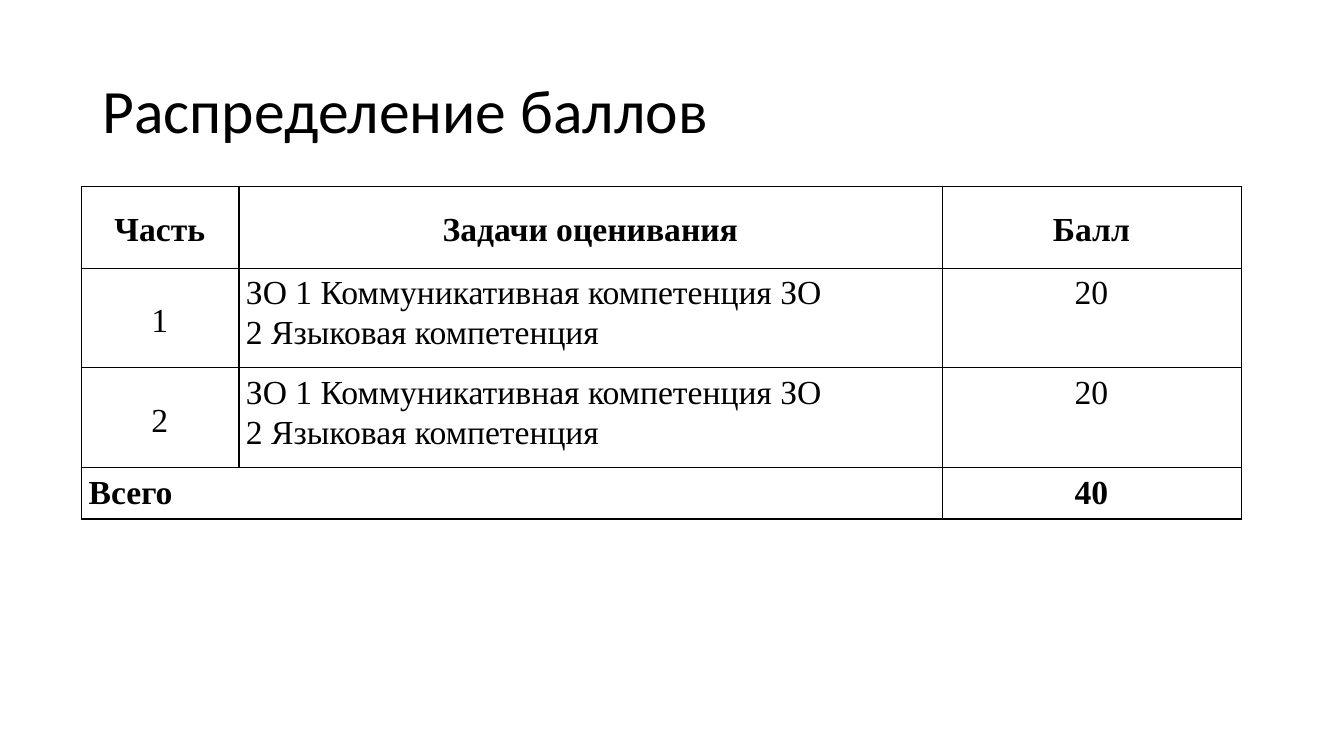
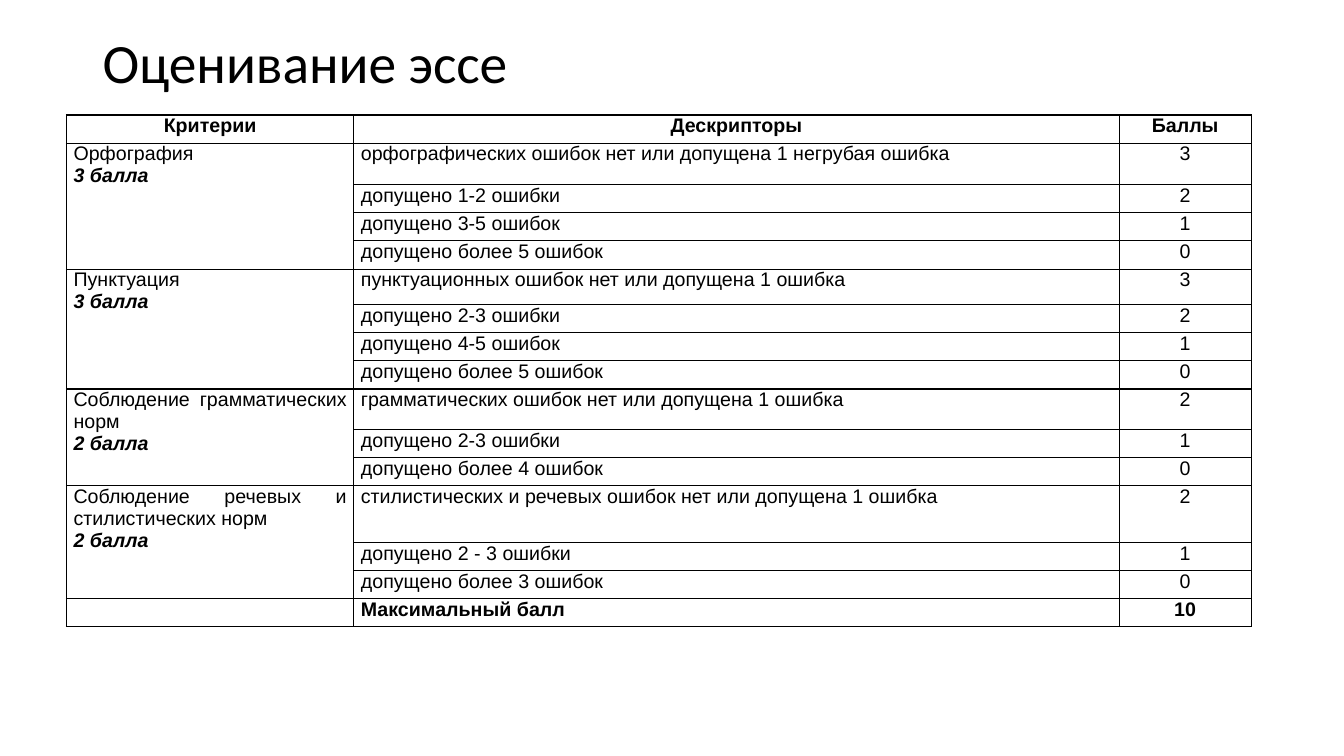
from lxml import etree
from pptx import Presentation
from pptx import util as u
from pptx.dml.color import RGBColor
from pptx.enum import text
from pptx.oxml import ns

COLORS = {"ink": "000000", "paper": "FFFFFF"}
TITLE_FONT = "Calibri"
CENTER = text.PP_ALIGN.CENTER
LEFT = text.PP_ALIGN.LEFT
JUSTIFY = text.PP_ALIGN.JUSTIFY
TOP = text.MSO_ANCHOR.TOP
MIDDLE = text.MSO_ANCHOR.MIDDLE

SCORE_STYLE = {
    "font": "Times New Roman", "size": 24, "line_spacing": 1.07,
    "space_after": 0.7, "margins": (0.07, 0.04, 0.08, 0),
}
ESSAY_STYLE = {
    "font": "Arial", "size": 14, "line_spacing": 1,
    "space_after": 0, "margins": (0.07, 0, 0.07, 0),
}

SCORE_TASKS = "ЗO 1 Коммуникативная компетенция ЗO\v2 Языковая компетенция"
SCORE_PARTS = [("1", SCORE_TASKS, "20"), ("2", SCORE_TASKS, "20")]

ROW_HEIGHT = 0.28
CRITERIA = [
    ("Орфография", "3 балла", 0.41, [
        ("орфографических ошибок нет или допущена 1 негрубая ошибка", "3"),
        ("допущено 1-2 ошибки", "2"),
        ("допущено 3-5 ошибок", "1"),
        ("допущено более 5 ошибок", "0"),
    ]),
    ("Пунктуация", "3 балла", 0.35, [
        ("пунктуационных ошибок нет или допущена 1 ошибка", "3"),
        ("допущено 2-3 ошибки", "2"),
        ("допущено 4-5 ошибок", "1"),
        ("допущено более 5 ошибок", "0"),
    ]),
    ("Соблюдение грамматических норм", "2 балла", 0.4, [
        ("грамматических ошибок нет или допущена 1 ошибка", "2"),
        ("допущено 2-3 ошибки", "1"),
        ("допущено более 4 ошибок", "0"),
    ]),
    ("Соблюдение речевых и стилистических норм", "2 балла", 0.56, [
        ("стилистических и речевых ошибок нет или допущена 1 ошибка", "2"),
        ("допущено 2 - 3 ошибки", "1"),
        ("допущено более 3 ошибок", "0"),
    ]),
]


def style_font(font, name, size, bold=False, italic=False):
    font.name = name
    font.size = u.Pt(size)
    font.bold = bold
    font.italic = italic
    font.color.rgb = RGBColor.from_string(COLORS["ink"])


def add_slide(presentation, title, title_height, title_size):
    slide = presentation.slides.add_slide(presentation.slide_layouts[6])
    slide.background.fill.solid()
    slide.background.fill.fore_color.rgb = RGBColor.from_string(COLORS["paper"])
    shape = slide.shapes.add_textbox(
        u.Inches(0.92), u.Inches(0.4), u.Inches(11.5), u.Inches(title_height))
    frame = shape.text_frame
    frame.word_wrap = True
    frame.vertical_anchor = MIDDLE
    paragraph = frame.paragraphs[0]
    paragraph.text = title
    paragraph.line_spacing = 0.9
    style_font(paragraph.font, TITLE_FONT, title_size)
    return slide


def add_borders(cell):
    properties = cell._tc.get_or_add_tcPr()
    for side in ("lnL", "lnR", "lnT", "lnB"):
        line = etree.SubElement(properties, ns.qn(f"a:{side}"), w=str(u.Pt(1)))
        fill = etree.SubElement(line, ns.qn("a:solidFill"))
        etree.SubElement(fill, ns.qn("a:srgbClr"), val=COLORS["ink"])


def add_grid(slide, left, top, widths, heights, style):
    table = slide.shapes.add_table(
        len(heights), len(widths), u.Inches(left), u.Inches(top),
        u.Inches(sum(widths)), u.Inches(sum(heights))).table
    table.first_row = False
    table.horz_banding = False
    for column, width in zip(table.columns, widths):
        column.width = u.Inches(width)
    for row, height in zip(table.rows, heights):
        row.height = u.Inches(height)
    for cell in table.iter_cells():
        add_borders(cell)
        cell.fill.background()
        (cell.margin_left, cell.margin_top,
         cell.margin_right, cell.margin_bottom) = map(u.Inches, style["margins"])
        style_font(cell.text_frame.paragraphs[0].font, style["font"], style["size"])
    return table


def write_cell(cell, style, content, align, bold=False, anchor=TOP, note=None):
    cell.vertical_anchor = anchor
    frame = cell.text_frame
    lines = [(frame.paragraphs[0], content, bold, False)]
    if note:
        lines.append((frame.add_paragraph(), note, True, True))
    for paragraph, line, is_bold, is_italic in lines:
        paragraph.text = line
        paragraph.alignment = align
        paragraph.line_spacing = style["line_spacing"]
        paragraph.space_after = u.Pt(style["space_after"])
        style_font(paragraph.font, style["font"], style["size"], is_bold, is_italic)


def write_header(table, style, labels, anchor=TOP):
    for column, label in enumerate(labels):
        write_cell(table.cell(0, column), style, label, CENTER, True, anchor)


def build_score_slide(presentation):
    slide = add_slide(presentation, "Распределение баллов", 1.45, 44)
    style = SCORE_STYLE
    table = add_grid(slide, 0.81, 1.85, [1.56, 6.98, 2.96],
                     [0.81, 0.99, 0.99, 0.51], style)
    write_header(table, style, ["Часть", "Задачи оценивания", "Балл"], MIDDLE)
    for row, (part, tasks, score) in enumerate(SCORE_PARTS, 1):
        write_cell(table.cell(row, 0), style, part, CENTER, anchor=MIDDLE)
        write_cell(table.cell(row, 1), style, tasks, LEFT)
        write_cell(table.cell(row, 2), style, score, CENTER)
    table.cell(3, 0).merge(table.cell(3, 1))
    write_cell(table.cell(3, 0), style, "Всего", LEFT, True)
    write_cell(table.cell(3, 2), style, "40", CENTER, True)


def build_essay_slide(presentation):
    slide = add_slide(presentation, "Оценивание эссе", 0.5, 39.6)
    style = ESSAY_STYLE
    heights = [ROW_HEIGHT]
    for _, _, first_height, levels in CRITERIA:
        heights += [first_height] + [ROW_HEIGHT] * (len(levels) - 1)
    heights.append(ROW_HEIGHT)
    table = add_grid(slide, 0.66, 1.14, [2.85, 7.59, 1.31], heights, style)
    write_header(table, style, ["Критерии", "Дескрипторы", "Баллы"])
    row = 1
    for criterion, total, _, levels in CRITERIA:
        table.cell(row, 0).merge(table.cell(row + len(levels) - 1, 0))
        write_cell(table.cell(row, 0), style, criterion, JUSTIFY, note=total)
        for descriptor, points in levels:
            write_cell(table.cell(row, 1), style, descriptor, JUSTIFY)
            write_cell(table.cell(row, 2), style, points, CENTER)
            row += 1
    write_cell(table.cell(row, 1), style, "Максимальный балл", JUSTIFY, True)
    write_cell(table.cell(row, 2), style, "10", CENTER, True)


def main():
    presentation = Presentation()
    presentation.slide_width = u.Inches(13.33)
    presentation.slide_height = u.Inches(7.5)
    build_score_slide(presentation)
    build_essay_slide(presentation)
    presentation.save("out.pptx")


if __name__ == "__main__":
    main()
